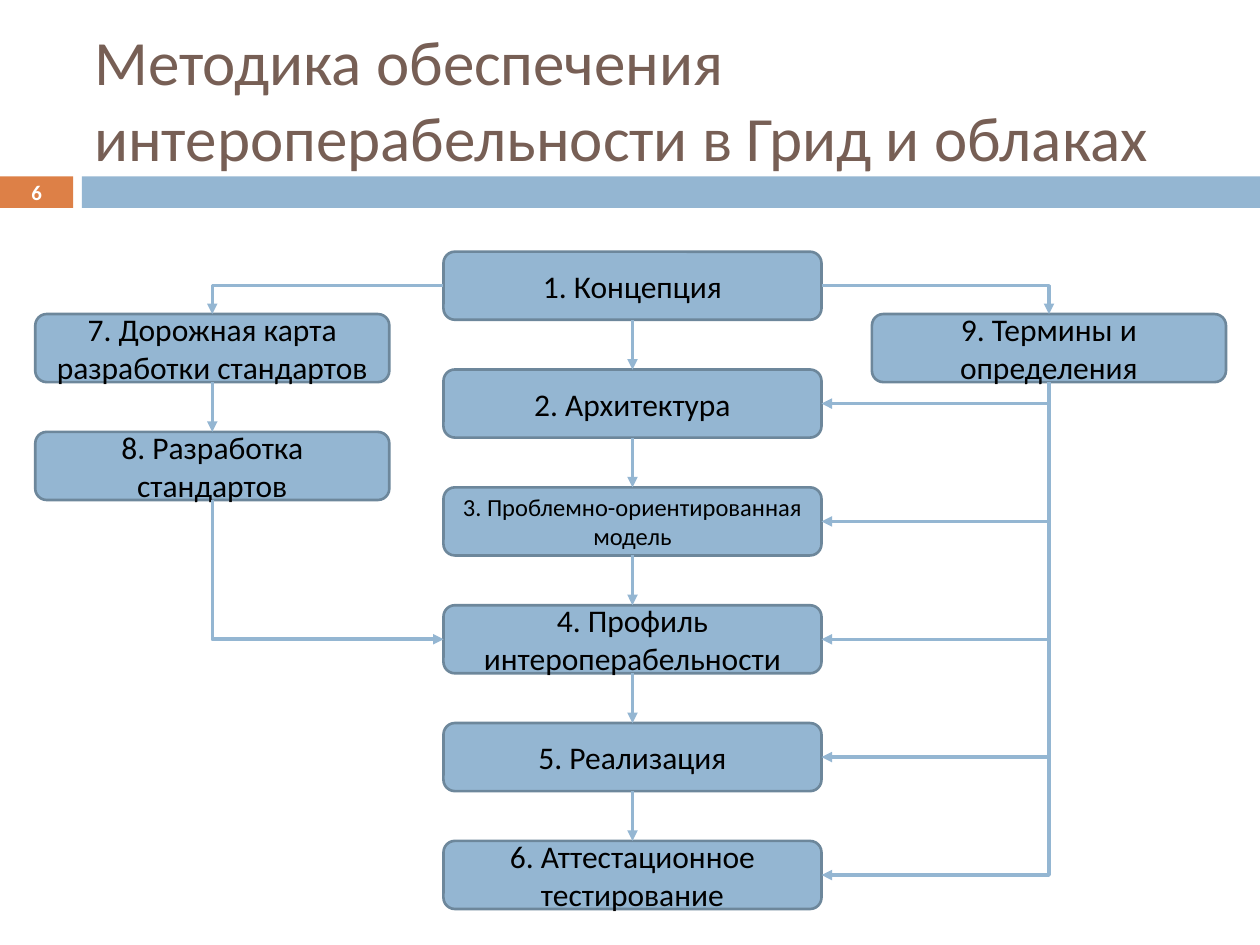
"""Flowchart slide: ensuring interoperability in grids and clouds."""
from collections import namedtuple

from lxml import etree
from pptx import Presentation, util as u
from pptx.dml import color
from pptx.enum import shapes, text
from pptx.oxml import ns

WIDTH, HEIGHT = u.Inches(10), u.Inches(7.5)
COLUMN, ROW = WIDTH / 100, HEIGHT / 100
STEP, DEPTH = 12.47, 7.2
COLORS = {"title": "775F55", "accent": "DD8047", "blue": "94B6D2",
          "edge": "6D879B", "text": "000000", "white": "FFFFFF"}
MAIN_STEPS = ["1. Концепция", "2. Архитектура", "3. Проблемно-ориентированная модель",
              "4. Профиль интероперабельности", "5. Реализация",
              "6. Аттестационное тестирование"]
STANDARD_STEPS = ["7. Дорожная карта разработки стандартов", "8. Разработка стандартов"]
TERM_STEPS = ["9. Термины и определения"]
SMALL_STEP = MAIN_STEPS[2]


class Box(namedtuple("Box", "left top width height")):
    """A rectangle in grid columns and rows."""

    @property
    def center(self):
        """Return the middle column."""
        return self.left + self.width / 2

    @property
    def middle(self):
        """Return the middle row."""
        return self.top + self.height / 2

    @property
    def right(self):
        """Return the column of the right edge."""
        return self.left + self.width

    @property
    def bottom(self):
        """Return the row of the bottom edge."""
        return self.top + self.height

    def emu(self):
        """Return the four lengths in slide units."""
        return [round(value * unit) for value, unit in zip(self, (COLUMN, ROW) * 2)]


def rgb(name):
    """Look up a palette colour."""
    return color.RGBColor.from_string(COLORS[name])


def write(shape, words, ink, align=text.PP_ALIGN.CENTER, **font):
    """Put one formatted paragraph in a shape."""
    frame = shape.text_frame
    frame.word_wrap = True
    frame.vertical_anchor = text.MSO_ANCHOR.MIDDLE
    para = frame.paragraphs[0]
    para.alignment = align
    span = para.add_run()
    span.text = words
    span.font.color.rgb = rgb(ink)
    for name, value in {"name": "Calibri", **font}.items():
        setattr(span.font, name, value)


def add_block(page, box, fill, kind=shapes.MSO_SHAPE.RECTANGLE, edge=None):
    """Draw a filled shape with an optional outline."""
    shape = page.shapes.add_shape(kind, *box.emu())
    shape.shadow.inherit = False
    shape.fill.solid()
    shape.fill.fore_color.rgb = rgb(fill)
    if edge:
        shape.line.color.rgb = rgb(edge)
        shape.line.width = u.Pt(1.5)
    else:
        shape.line.fill.background()
    return shape


def add_arrow(page, start, end, kind=shapes.MSO_CONNECTOR.STRAIGHT):
    """Draw an arrow between two slide points."""
    arrow = page.shapes.add_connector(kind, *(round(value) for value in (*start, *end)))
    arrow.line.color.rgb = rgb("blue")
    arrow.line.width = u.Pt(2)
    etree.SubElement(arrow.line._get_or_add_ln(), ns.qn("a:tailEnd"), type="triangle")
    etree.SubElement(arrow._element.spPr, ns.qn("a:effectLst"))
    return arrow


def add_straight(page, start, end):
    """Draw a straight arrow between two grid points."""
    add_arrow(page, *((x * COLUMN, y * ROW) for x, y in (start, end)))


def add_bend(page, start, end, down_first=False):
    """Draw a one-corner arrow, sideways first unless told to go down first."""
    (x1, y1), (x2, y2) = ((x * COLUMN, y * ROW) for x, y in (start, end))
    turn = 0
    if down_first:
        turn = 90 if x2 < x1 else 270
        sign = 1 if x2 < x1 else -1
        mid_x, mid_y = (x1 + x2) / 2, (y1 + y2) / 2
        half_x, half_y = sign * (y2 - y1) / 2, abs(x2 - x1) / 2
        x1, x2 = mid_x - half_x, mid_x + half_x
        y1, y2 = mid_y - half_y, mid_y + half_y
    arrow = add_arrow(page, (x1, y1), (x2, y2), shapes.MSO_CONNECTOR.ELBOW)
    properties = arrow._element.spPr
    properties.find(ns.qn("a:prstGeom")).set("prst", "bentConnector2")
    if turn:
        properties.find(ns.qn("a:xfrm")).set("rot", str(turn * 60000))


def add_header(page, box):
    """Place the title over the numbered band."""
    band_top, band_depth = box.height - 3.33, 3.33
    number = add_block(page, Box(box.left, band_top, 5.8, band_depth), "accent")
    write(number, "6", "white", size=u.Pt(11.9), bold=True)
    add_block(page, Box(box.left + 6.5, band_top, box.width - 6.5, band_depth), "blue")
    title = page.shapes.add_textbox(*Box(box.left + 6.5, box.top + 3.33, 89.2, 14.13).emu())
    write(title, "Методика обеспечения интероперабельности в Грид и облаках", "title",
          text.PP_ALIGN.LEFT, size=u.Pt(36))


def add_chain(page, box, labels):
    """Stack labelled steps down a column, join them and return their boxes."""
    steps = [Box(box.left, box.top + index * STEP, box.width, DEPTH)
             for index in range(len(labels))]
    for step, label in zip(steps, labels):
        shape = add_block(page, step, "blue", shapes.MSO_SHAPE.ROUNDED_RECTANGLE, "edge")
        write(shape, label, "text", size=u.Pt(14 if label == SMALL_STEP else 18))
    for upper, lower in zip(steps, steps[1:]):
        add_straight(page, (upper.center, upper.bottom), (lower.center, lower.top))
    return steps


def add_flowchart(page, box):
    """Place the three chains and the arrows between them."""
    side_top = box.top + 6.6
    main = add_chain(page, Box(box.left + 32.4, box.top, 30, box.height), MAIN_STEPS)
    standards = add_chain(page, Box(box.left, side_top, 28.1, box.height), STANDARD_STEPS)
    terms, = add_chain(page, Box(box.right - 28.1, side_top, 28.1, box.height), TERM_STEPS)
    concept, profile, last = main[0], main[3], main[-1]
    roadmap, development = standards
    add_bend(page, (concept.left, concept.middle), (roadmap.center, roadmap.top))
    add_bend(page, (concept.right, concept.middle), (terms.center, terms.top))
    add_bend(page, (development.center, development.bottom),
             (profile.left, profile.middle), down_first=True)
    add_bend(page, (terms.center, terms.bottom), (last.right, last.middle), down_first=True)
    for step in main[1:-1]:
        add_straight(page, (terms.center, step.middle), (step.right, step.middle))


def main():
    """Build and save the deck."""
    deck = Presentation()
    deck.slide_width, deck.slide_height = WIDTH, HEIGHT
    page = deck.slides.add_slide(deck.slide_layouts[6])
    add_header(page, Box(0, 0, 100, 22))
    add_flowchart(page, Box(2.8, 26.64, 94.5, 69.5))
    deck.save("out.pptx")


if __name__ == "__main__":
    main()
